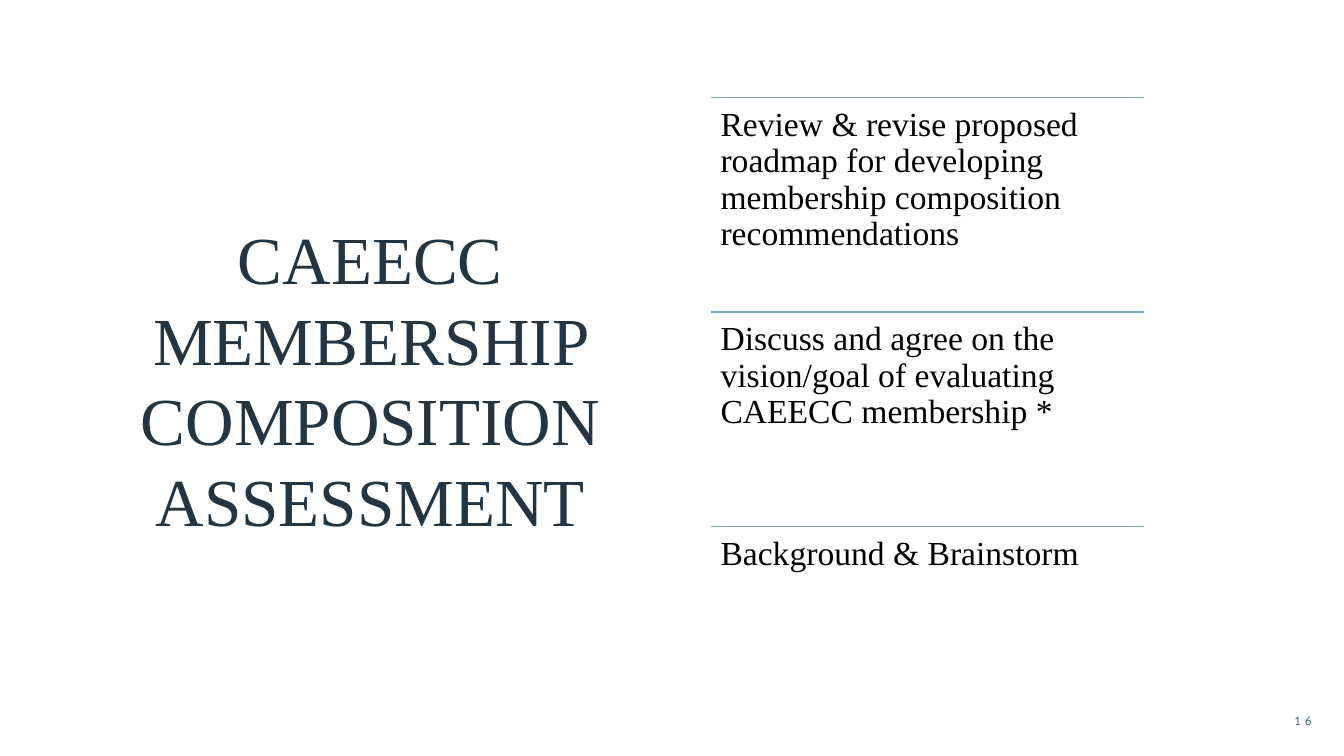
from dataclasses import dataclass

from lxml.etree import SubElement
from pptx import Presentation
from pptx.dml.color import RGBColor
from pptx.enum.shapes import MSO_CONNECTOR
from pptx.enum.text import MSO_ANCHOR, PP_ALIGN
from pptx.oxml.ns import qn
from pptx.util import Cm, Pt


@dataclass(frozen=True)
class Theme:
    """Colours, fonts and type sizes of the slide."""
    serif: str = "Times New Roman"
    sans: str = "Calibri"
    title: RGBColor = RGBColor(0x24, 0x35, 0x41)
    body: RGBColor = RGBColor(0, 0, 0)
    rule: RGBColor = RGBColor(0x83, 0xA6, 0xBC)
    number: RGBColor = RGBColor(0x48, 0x6B, 0x83)
    title_size: Pt = Pt(48)
    body_size: Pt = Pt(24)
    number_size: Pt = Pt(9)
    rule_width: Pt = Pt(1)


THEME = Theme()
AGENDA = [
    "Review & revise proposed roadmap for developing membership composition recommendations",
    "Discuss and agree on the vision/goal of evaluating CAEECC membership *",
    "Background & Brainstorm",
]


def add_text(s, box, text, font, size, color, align=PP_ALIGN.LEFT, anchor=MSO_ANCHOR.MIDDLE):
    """Add a wrapped one-paragraph text box and return its paragraph."""
    tf = s.shapes.add_textbox(*box).text_frame
    tf.word_wrap = True
    tf.vertical_anchor = anchor
    tf.text = text
    p = tf.paragraphs[0]
    p.alignment = align
    r = p.runs[0]
    r.font.name, r.font.size = font, size
    r.font.color.rgb = color
    return p


def add_title(s, box):
    """Place the centred title in its box."""
    p = add_text(s, box, "CAEECC MEMBERSHIP COMPOSITION ASSESSMENT", THEME.serif,
                 THEME.title_size, THEME.title, PP_ALIGN.CENTER)
    p.space_before = Pt(10)


def add_rule(s, left, top, width):
    """Draw a thin horizontal rule."""
    line = s.shapes.add_connector(MSO_CONNECTOR.STRAIGHT, left, top, left + width, top)
    line.line.color.rgb = THEME.rule
    line.line.width = THEME.rule_width
    SubElement(line._element.spPr, qn("a:effectLst"))


def add_agenda(s, box, items):
    """Stack the agenda items in equal rows, each under a rule."""
    left, top, width, height = box
    row = height // len(items)
    for i, item in enumerate(items):
        y = top + i * row
        add_rule(s, left, y, width)
        p = add_text(s, (left, y, width, row), item, THEME.serif,
                     THEME.body_size, THEME.body, anchor=MSO_ANCHOR.TOP)
        p.line_spacing = 0.9
        tf = s.shapes[-1].text_frame
        tf.margin_left = tf.margin_top = tf.margin_right = tf.margin_bottom = Cm(0.25)


def add_number(s, box, number):
    """Place the letter-spaced slide number in its box."""
    p = add_text(s, box, str(number), THEME.sans, THEME.number_size,
                 THEME.number, PP_ALIGN.RIGHT)
    p.runs[0].font._element.set("spc", "300")


def main():
    """Build the slide and save it."""
    prs = Presentation()
    prs.slide_width, prs.slide_height = Cm(33.87), Cm(19.05)
    s = prs.slides.add_slide(prs.slide_layouts[6])
    add_title(s, (Cm(0.76), Cm(2.77), Cm(17.15), Cm(13.54)))
    add_agenda(s, (Cm(17.91), Cm(2.46), Cm(10.92), Cm(16.2)), AGENDA)
    add_number(s, (Cm(30.89), Cm(17.65), Cm(2.41), Cm(1.02)), 16)
    prs.save("out.pptx")


if __name__ == "__main__":
    main()
